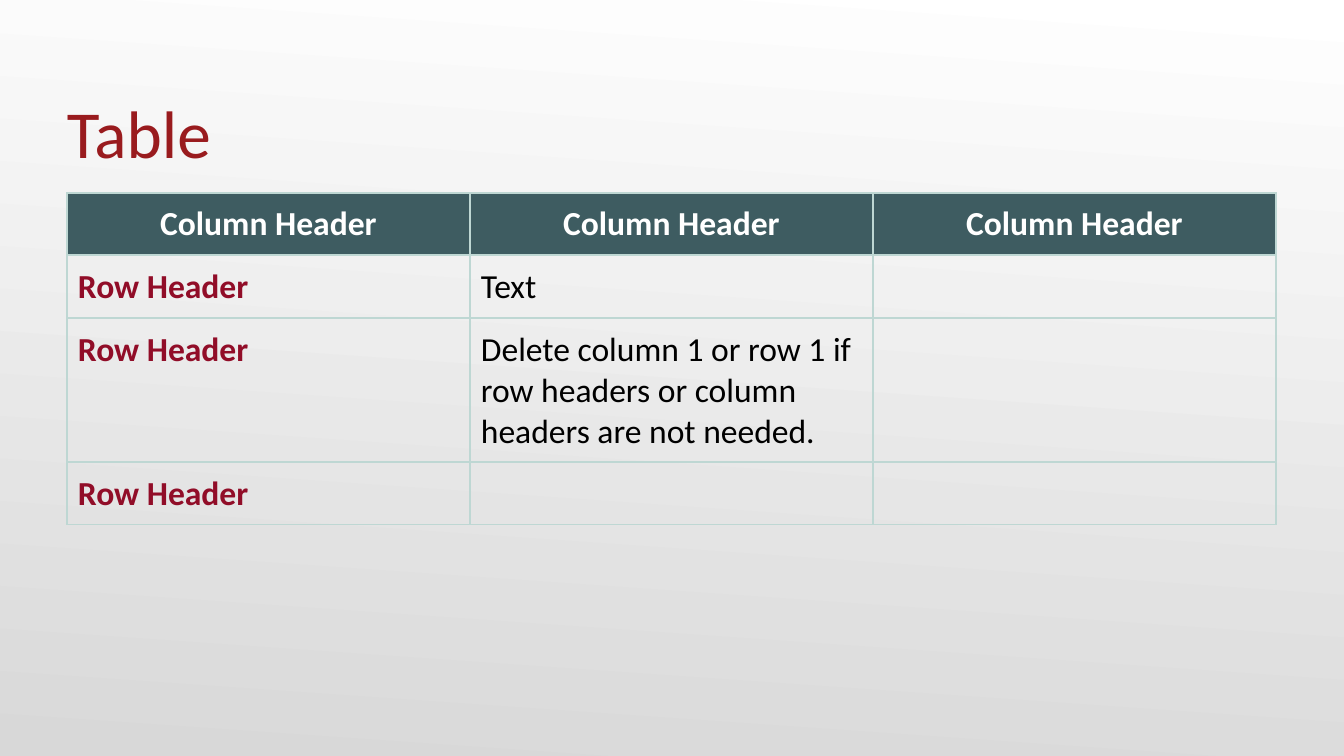
from dataclasses import dataclass

from lxml.etree import SubElement
from pptx import Presentation
from pptx.dml.color import RGBColor as Color
from pptx.enum.text import MSO_ANCHOR as Anchor, PP_ALIGN as Align
from pptx.oxml.ns import qn
from pptx.util import Pt

# Content
TITLE = "Table"
ROWS = [
    ["Column Header", "Column Header", "Column Header"],
    ["Row Header", "Text", ""],
    ["Row Header", "Delete column 1 or row 1 if row headers or column headers are not needed.", ""],
    ["Row Header", "", ""],
]

# Layout in px
SCALE = 914400 / 134.4
SLIDE_SIZE = (1344, 756)
TITLE_BOX = (67, 46, 1210, 126)
TABLE_LEFT, TABLE_TOP, COLUMN_WIDTH = 67, 193, 403
ROW_HEIGHTS = [62, 63, 144, 62]
CELL_INSET = 11
TITLE_INSET = 7


@dataclass(frozen=True)
class Theme:
    font: str = "Calibri"
    title_size: int = 36
    cell_size: int = 18
    title: str = "991B1E"
    header_text: str = "FFFFFF"
    header_fill: str = "3E5C61"
    row_header: str = "910D28"
    body: str = "000000"
    border: str = "BED7D3"
    background: tuple = ("FFFFFF", "D8D8D8")


THEME = Theme()


def px(length):
    return round(length * SCALE)


def style(para, size, color, bold=False):
    font = para.font
    font.name, font.size, font.bold = THEME.font, Pt(size), bold
    font.color.rgb = Color.from_string(color)
    for span in para.runs:
        span.font.name, span.font.size, span.font.bold = THEME.font, Pt(size), bold
        span.font.color.rgb = Color.from_string(color)


def add_borders(cell):
    for side in ("lnL", "lnR", "lnT", "lnB"):
        line = SubElement(cell._tc.get_or_add_tcPr(), qn(f"a:{side}"), w=str(Pt(1)))
        fill = SubElement(line, qn("a:solidFill"))
        SubElement(fill, qn("a:srgbClr"), val=THEME.border)


def add_title(page):
    box = page.shapes.add_textbox(*map(px, TITLE_BOX))
    frame = box.text_frame
    frame.word_wrap = True
    frame.vertical_anchor = Anchor.BOTTOM
    frame.margin_left = frame.margin_right = frame.margin_bottom = 0
    frame.margin_top = px(TITLE_INSET)
    frame.text = TITLE
    style(frame.paragraphs[0], THEME.title_size, THEME.title)


def fill_cell(cell, text, is_header, is_row_header):
    add_borders(cell)
    cell.margin_left = cell.margin_right = px(CELL_INSET)
    cell.margin_top = cell.margin_bottom = px(CELL_INSET)
    cell.text = text
    para = cell.text_frame.paragraphs[0]
    if is_header:
        cell.fill.solid()
        cell.fill.fore_color.rgb = Color.from_string(THEME.header_fill)
        para.alignment = Align.CENTER
        color = THEME.header_text
    else:
        cell.fill.background()
        color = THEME.row_header if is_row_header else THEME.body
    style(para, THEME.cell_size, color, is_header or is_row_header)


def add_grid(page):
    columns = len(ROWS[0])
    area = (TABLE_LEFT, TABLE_TOP, columns * COLUMN_WIDTH, sum(ROW_HEIGHTS))
    table = page.shapes.add_table(len(ROWS), columns, *map(px, area)).table
    table.first_row = table.horz_banding = False
    for column in table.columns:
        column.width = px(COLUMN_WIDTH)
    for r, (texts, height) in enumerate(zip(ROWS, ROW_HEIGHTS)):
        table.rows[r].height = px(height)
        for c, text in enumerate(texts):
            fill_cell(table.cell(r, c), text, r == 0, c == 0)


def main():
    deck = Presentation()
    deck.slide_width, deck.slide_height = map(px, SLIDE_SIZE)
    page = deck.slides.add_slide(deck.slide_layouts[6])

    # Background
    fill = page.background.fill
    fill.gradient()
    fill.gradient_angle = 266
    for stop, color, position in zip(fill.gradient_stops, THEME.background, (0, 1)):
        stop.color.rgb = Color.from_string(color)
        stop.position = position

    add_title(page)
    add_grid(page)
    deck.save("out.pptx")


if __name__ == "__main__":
    main()
